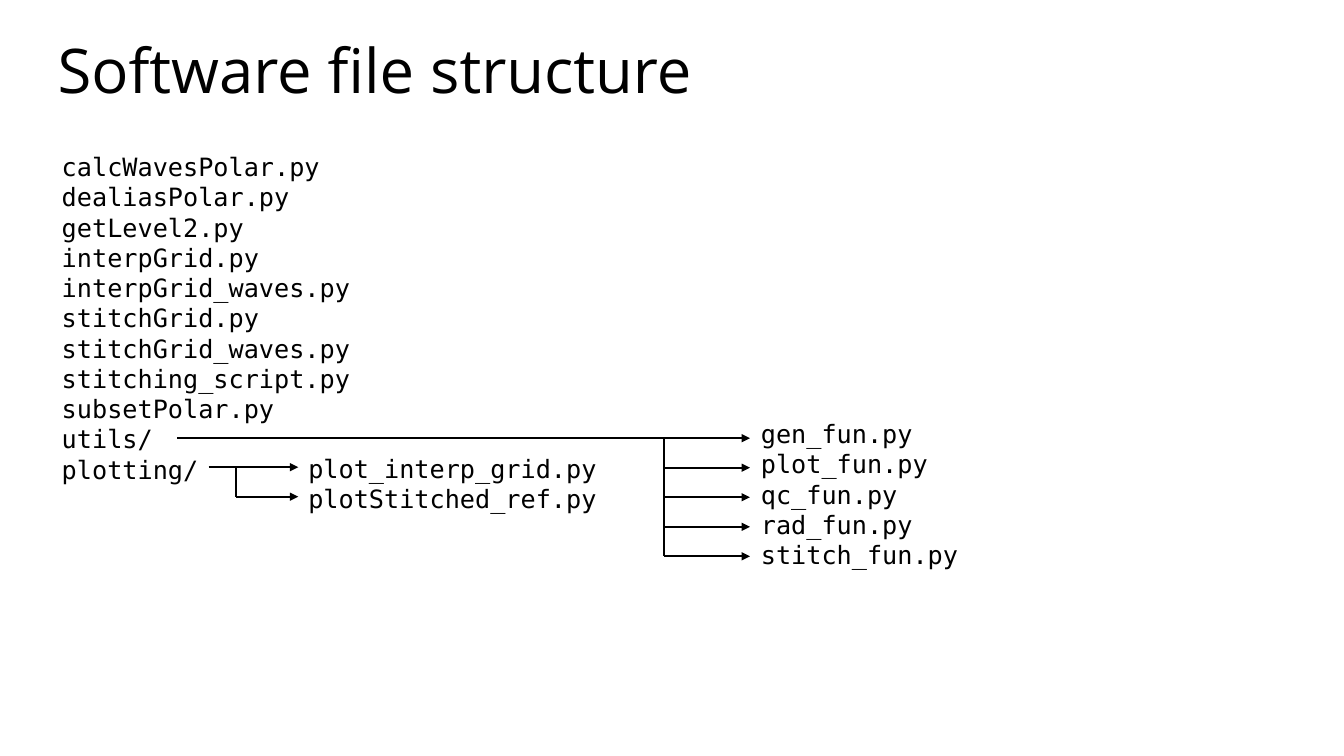
from lxml import etree
from pptx import Presentation
from pptx.dml.color import RGBColor
from pptx.enum.shapes import MSO_CONNECTOR
from pptx.enum.text import MSO_ANCHOR, MSO_AUTO_SIZE, PP_ALIGN
from pptx.oxml.ns import qn
from pptx.util import Pt

BLACK = RGBColor(0x00, 0x00, 0x00)
TITLE_FONT = {"name": "Open Sans", "size": Pt(44)}
FILE_FONT = {"name": "DejaVu Sans Mono", "size": Pt(18)}
TITLE_FORMAT = {"alignment": PP_ALIGN.LEFT, "line_spacing": 0.9}
FILE_FORMAT = {"alignment": PP_ALIGN.LEFT, "space_before": Pt(0)}
TITLE_FRAME = {"vertical_anchor": MSO_ANCHOR.MIDDLE, "word_wrap": True,
               "auto_size": MSO_AUTO_SIZE.NONE}
FILE_FRAME = {"vertical_anchor": MSO_ANCHOR.TOP, "word_wrap": False,
              "auto_size": MSO_AUTO_SIZE.SHAPE_TO_FIT_TEXT}

ROOT_FILES = ["calcWavesPolar.py", "dealiasPolar.py", "getLevel2.py",
              "interpGrid.py", "interpGrid_waves.py", "stitchGrid.py",
              "stitchGrid_waves.py", "stitching_script.py", "subsetPolar.py",
              "utils/", "plotting/"]
UTILS_FILES = ["gen_fun.py", "plot_fun.py", "qc_fun.py", "rad_fun.py",
               "stitch_fun.py"]
PLOTTING_FILES = ["plot_interp_grid.py", "plotStitched_ref.py"]
ROW_STEP = 21.1


def apply_format(target, values):
    for name, value in values.items():
        setattr(target, name, value)


def place(shape, left, top, width, height):
    apply_format(shape, {"left": Pt(left), "top": Pt(top),
                         "width": Pt(width), "height": Pt(height)})


def write_lines(shape, lines, frame_format, paragraph_format, font_format):
    frame = shape.text_frame
    frame.text = "\n".join(lines)
    apply_format(frame, frame_format)
    for paragraph in frame.paragraphs:
        apply_format(paragraph, paragraph_format)
        apply_format(paragraph.runs[0].font, font_format)
        paragraph.runs[0].font.color.rgb = BLACK


def remove_bullets(shape):
    for paragraph in shape.text_frame.paragraphs:
        properties = paragraph._p.get_or_add_pPr()
        properties.set("marL", "0")
        properties.set("indent", "0")
        etree.SubElement(properties, qn("a:buNone"))


def add_file_list(slide, files, left, top, width, height):
    box = slide.shapes.add_textbox(Pt(left), Pt(top), Pt(width), Pt(height))
    write_lines(box, files, FILE_FRAME, FILE_FORMAT, FILE_FONT)


def add_line(slide, start, end, arrow=False):
    points = [Pt(value) for value in (*start, *end)]
    connector = slide.shapes.add_connector(MSO_CONNECTOR.STRAIGHT, *points)
    connector.line.color.rgb = BLACK
    connector.line.width = Pt(1.5)
    if arrow:
        etree.SubElement(connector.line._get_or_add_ln(), qn("a:tailEnd"),
                         type="triangle")
    etree.SubElement(connector._element.spPr, qn("a:effectLst"))


def add_branches(slide, start, trunk, end, top, count):
    rows = [top + ROW_STEP * index for index in range(count)]
    add_line(slide, (trunk, top), (trunk, rows[-1]))
    for index, row in enumerate(rows):
        left = trunk if index else start
        add_line(slide, (left, row), (end, row), arrow=True)


def main():
    presentation = Presentation()
    presentation.slide_width = Pt(960)
    presentation.slide_height = Pt(540)
    slide = presentation.slides.add_slide(presentation.slide_layouts[1])

    title, root_list = slide.placeholders
    place(title, 34, 0, 889, 104.4)
    write_lines(title, ["Software file structure"], TITLE_FRAME,
                TITLE_FORMAT, TITLE_FONT)

    place(root_list, 36.9, 104.6, 223, 247)
    write_lines(root_list, ROOT_FILES, FILE_FRAME, FILE_FORMAT, FILE_FONT)
    remove_bullets(root_list)

    add_file_list(slide, UTILS_FILES, 536.4, 295.4, 157, 116.6)
    add_branches(slide, 126.7, 474.5, 535.7, 313, len(UTILS_FILES))

    add_file_list(slide, PLOTTING_FILES, 213.1, 320, 223, 51)
    add_branches(slide, 149, 168.5, 213.1, 333.7, len(PLOTTING_FILES))

    presentation.save("out.pptx")


if __name__ == "__main__":
    main()
